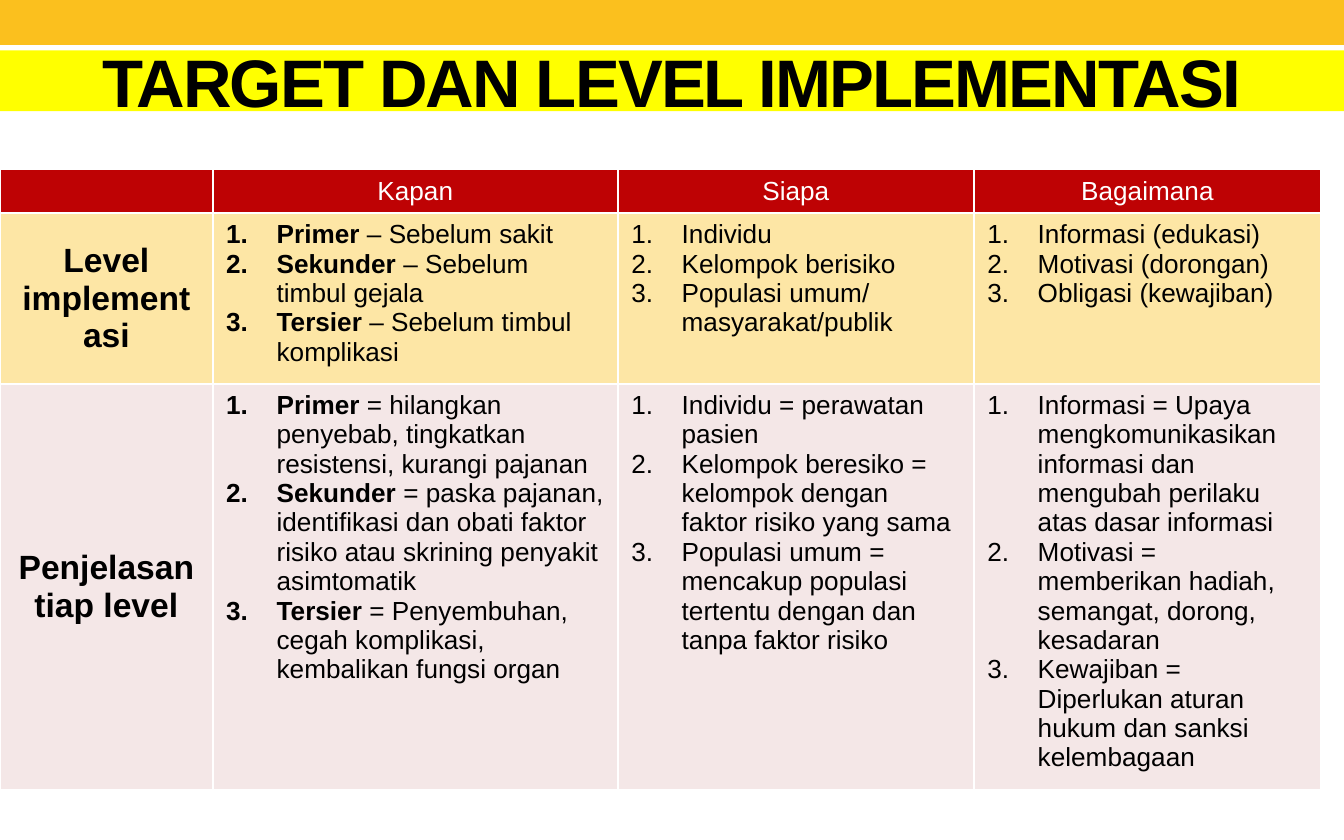
from dataclasses import dataclass

from pptx import Presentation
from pptx.dml.color import RGBColor
from pptx.enum.shapes import MSO_SHAPE
from pptx.enum.text import MSO_ANCHOR, MSO_AUTO_SIZE, PP_ALIGN
from pptx.oxml import parse_xml
from pptx.oxml.ns import nsdecls
from pptx.util import Pt


@dataclass(frozen=True)
class Theme:
    font: str = "Arial"
    black: str = "000000"
    white: str = "FFFFFF"
    bar: str = "FBC01E"
    title_fill: str = "FFFF00"
    header_fill: str = "BE0204"
    level_fill: str = "FDE6A5"
    detail_fill: str = "F4E7E7"
    title_size: int = 36
    label_size: int = 18
    body_size: int = 14


theme = Theme()


def add_run(paragraph, text, size, color=theme.black, bold=False):
    run = paragraph.add_run()
    run.text = text
    run.font.name = theme.font
    run.font.size = Pt(size)
    run.font.bold = bold
    run.font.color.rgb = RGBColor.from_string(color)
    return run


def style_cell(cell, fill):
    """Draw the white borders of a cell, then its fill."""
    properties = cell._tc.get_or_add_tcPr()
    for side in "LRTB":
        properties.append(parse_xml(
            f'<a:ln{side} {nsdecls("a")} w="{Pt(1)}"><a:solidFill>'
            f'<a:srgbClr val="{theme.white}"/></a:solidFill></a:ln{side}>'))
    cell.fill.solid()
    cell.fill.fore_color.rgb = RGBColor.from_string(fill)


presentation = Presentation()
presentation.slide_width, presentation.slide_height = Pt(720), Pt(450)
slide = presentation.slides.add_slide(presentation.slide_layouts[5])

# Top bar
bar = slide.shapes.add_shape(MSO_SHAPE.RECTANGLE, Pt(0), Pt(0), Pt(720), Pt(24))
bar.shadow.inherit = False
bar.fill.solid()
bar.fill.fore_color.rgb = RGBColor.from_string(theme.bar)
bar.line.fill.background()

# Title
title = slide.shapes.title
title.left, title.top, title.width, title.height = Pt(0), Pt(27), Pt(720), Pt(32.5)
title.fill.solid()
title.fill.fore_color.rgb = RGBColor.from_string(theme.title_fill)
title_frame = title.text_frame
title_frame.auto_size = MSO_AUTO_SIZE.NONE
title_frame.vertical_anchor = MSO_ANCHOR.MIDDLE
title_frame.margin_top = title_frame.margin_bottom = Pt(0)
title_paragraph = title_frame.paragraphs[0]
title_paragraph.alignment = PP_ALIGN.CENTER
title_run = add_run(title_paragraph, "TARGET DAN LEVEL IMPLEMENTASI",
                    theme.title_size, bold=True)
title_run.font._element.set("spc", "-100")

# Table: a list item is a pair of bold lead and plain text
headers = ["", "Kapan", "Siapa", "Bagaimana"]
levels = [
    ("Level implementasi", theme.level_fill, [
        [("Primer ", "– Sebelum sakit"),
         ("Sekunder ", "– Sebelum timbul gejala"),
         ("Tersier", " – Sebelum timbul komplikasi")],
        [("", "Individu"),
         ("", "Kelompok berisiko"),
         ("", "Populasi umum/ masyarakat/publik")],
        [("", "Informasi (edukasi)"),
         ("", "Motivasi (dorongan)"),
         ("", "Obligasi (kewajiban)")],
    ]),
    ("Penjelasan tiap level", theme.detail_fill, [
        [("Primer", " = hilangkan penyebab, tingkatkan resistensi, kurangi pajanan"),
         ("Sekunder", " = paska pajanan, identifikasi dan obati faktor risiko "
                      "atau skrining penyakit asimtomatik"),
         ("Tersier", " = Penyembuhan, cegah komplikasi, kembalikan fungsi organ")],
        [("", "Individu = perawatan pasien"),
         ("", "Kelompok beresiko = kelompok dengan faktor risiko yang sama"),
         ("", "Populasi umum = mencakup populasi tertentu dengan dan "
              "tanpa faktor risiko")],
        [("", "Informasi = Upaya mengkomunikasikan informasi dan mengubah "
              "perilaku atas dasar informasi"),
         ("", "Motivasi = memberikan hadiah, semangat, dorong, kesadaran"),
         ("", "Kewajiban = Diperlukan aturan hukum dan sanksi kelembagaan")],
    ]),
]
column_widths = [114, 217, 190.75, 186]
row_heights = [23.5, 91.5, 217.5]
table = slide.shapes.add_table(
    len(row_heights), len(column_widths), Pt(0), Pt(90.75),
    Pt(sum(column_widths)), Pt(sum(row_heights))).table
for column, width in zip(table.columns, column_widths):
    column.width = Pt(width)
for row, height in zip(table.rows, row_heights):
    row.height = Pt(height)

for column_index, header in enumerate(headers):
    cell = table.cell(0, column_index)
    style_cell(cell, theme.header_fill)
    cell.vertical_anchor = MSO_ANCHOR.MIDDLE
    cell.margin_top = cell.margin_bottom = Pt(0)
    if header:
        paragraph = cell.text_frame.paragraphs[0]
        paragraph.alignment = PP_ALIGN.CENTER
        add_run(paragraph, header, theme.body_size, theme.white)

for row_index, (label, fill, lists) in enumerate(levels, start=1):
    label_cell = table.cell(row_index, 0)
    style_cell(label_cell, fill)
    label_cell.vertical_anchor = MSO_ANCHOR.MIDDLE
    paragraph = label_cell.text_frame.paragraphs[0]
    paragraph.alignment = PP_ALIGN.CENTER
    add_run(paragraph, label, theme.label_size, bold=True)

    for column_index, items in enumerate(lists, start=1):
        cell = table.cell(row_index, column_index)
        style_cell(cell, fill)
        frame = cell.text_frame
        for item_index, (lead, text) in enumerate(items):
            paragraph = frame.add_paragraph() if item_index else frame.paragraphs[0]
            properties = paragraph._p.get_or_add_pPr()
            properties.set("marL", str(Pt(27)))
            properties.set("indent", str(-Pt(27)))
            properties.append(parse_xml(
                f'<a:buAutoNum {nsdecls("a")} type="arabicPeriod"/>'))
            if lead:
                add_run(paragraph, lead, theme.body_size, bold=True)
            add_run(paragraph, text, theme.body_size)

presentation.save("out.pptx")
